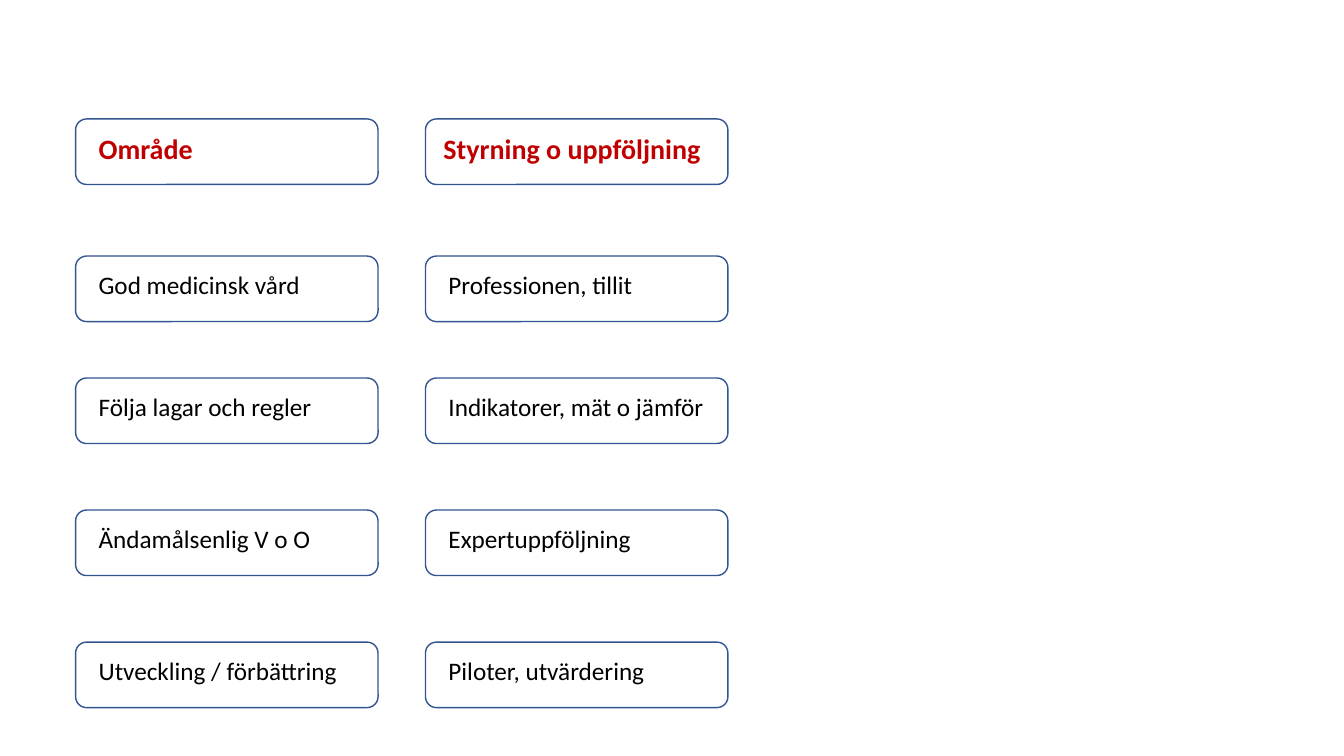
from dataclasses import dataclass

from pptx import Presentation
from pptx.dml.color import RGBColor
from pptx.enum.shapes import MSO_SHAPE
from pptx.enum.text import MSO_ANCHOR, MSO_AUTO_SIZE
from pptx.slide import Slide
from pptx.util import Inches, Pt

ROUND = MSO_SHAPE.ROUNDED_RECTANGLE
TOP = MSO_ANCHOR.TOP
GROW = MSO_AUTO_SIZE.SHAPE_TO_FIT_TEXT

COLORS = {"white": "FFFFFF", "edge": "325491", "text": "000000", "head": "C00000"}

# Grid of cards, in inches
LEFTS = (0.75, 4.22)
WIDTH, HEIGHT = 3, 0.65
INSET, DROP = 0.13, 0.08

# Text formats
BODY = {"name": "Calibri", "size": Pt(18), "bold": False}
HEAD = {"name": "Calibri", "size": Pt(20), "bold": True}
FRAME = {"word_wrap": True, "auto_size": GROW, "vertical_anchor": TOP}


@dataclass
class Label:
    text: str
    tall: float = 0.4
    shift: float = 0  # extra room on the left


@dataclass
class Row:
    top: float
    cells: tuple[Label, Label]
    font: dict
    color: str = "text"


ROWS = [
    Row(1.18, (Label("Område", 0.44),
               Label("Styrning o uppföljning", 0.44, 0.05)), HEAD, "head"),
    Row(2.54, (Label("God medicinsk vård", 1.01),
               Label("Professionen, tillit")), BODY),
    Row(3.75, (Label("Följa lagar och regler"),
               Label("Indikatorer, mät o jämför")), BODY),
    Row(5.06, (Label("Ändamålsenlig V o O"),
               Label("Expertuppföljning")), BODY),
    Row(6.37, (Label("Utveckling / förbättring", 0.71),
               Label("Piloter, utvärdering")), BODY),
]


def shade(name: str) -> RGBColor:
    return RGBColor.from_string(COLORS[name])


def apply(target: object, values: dict) -> None:
    for key, value in values.items():
        setattr(target, key, value)


def draw_card(slide: Slide, left: float, row: Row, label: Label) -> None:
    group = slide.shapes.add_group_shape()

    # Frame
    box = group.shapes.add_shape(
        ROUND, Inches(left), Inches(row.top), Inches(WIDTH), Inches(HEIGHT))
    box.shadow.inherit = False
    box.fill.solid()
    box.fill.fore_color.rgb = shade("white")
    box.line.color.rgb = shade("edge")
    box.line.width = Pt(1)

    # Label
    note = group.shapes.add_textbox(
        Inches(left + INSET - label.shift), Inches(row.top + DROP),
        Inches(WIDTH - 2 * INSET + label.shift), Inches(label.tall))
    apply(note.text_frame, FRAME)
    run = note.text_frame.paragraphs[0].add_run()
    run.text = label.text
    apply(run.font, row.font)
    run.font.color.rgb = shade(row.color)


def main() -> None:
    deck = Presentation()
    deck.slide_width, deck.slide_height = Inches(13.33), Inches(7.5)
    slide = deck.slides.add_slide(deck.slide_layouts[6])
    for row in ROWS:
        for left, label in zip(LEFTS, row.cells):
            draw_card(slide, left, row, label)
    deck.save("out.pptx")


if __name__ == "__main__":
    main()
